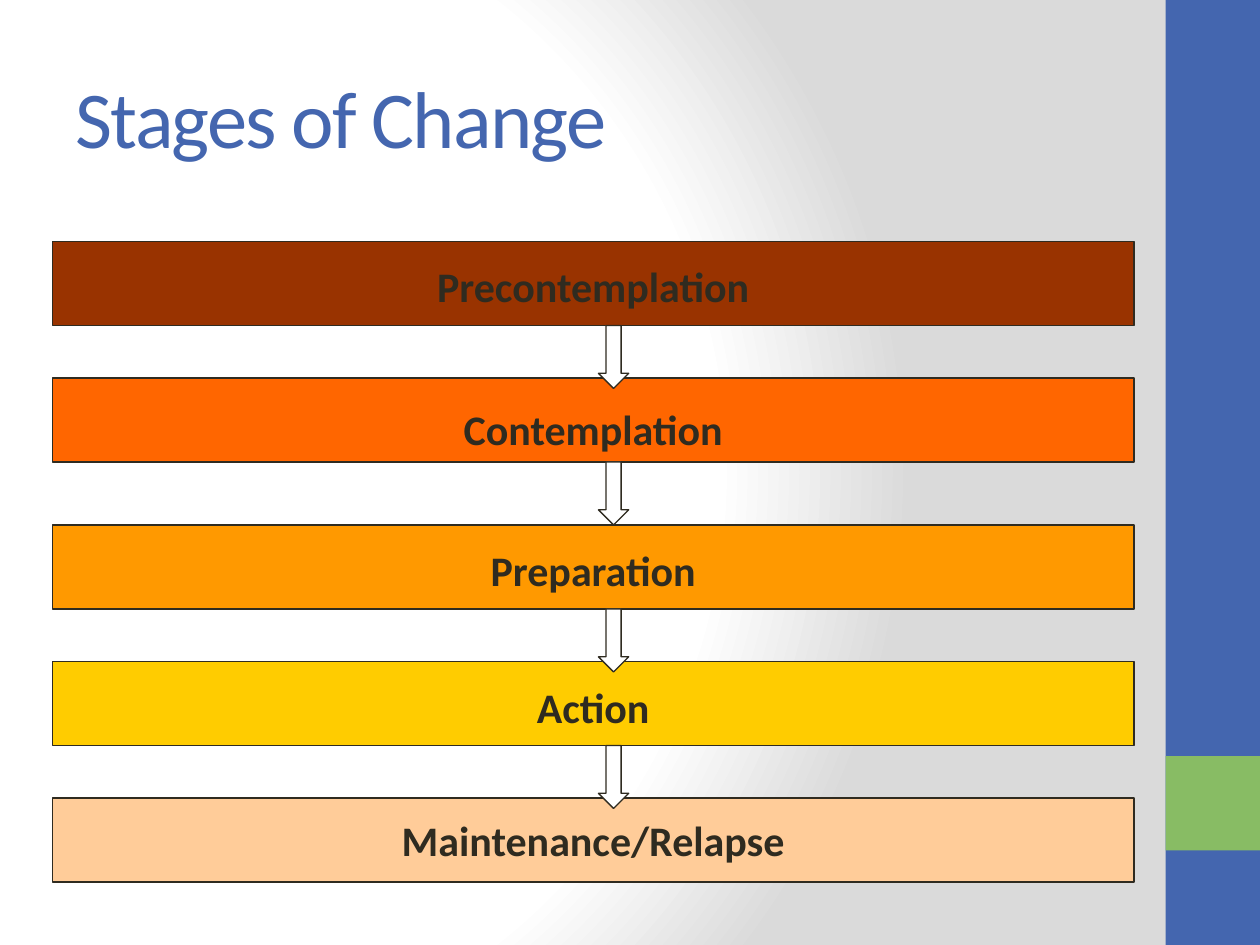
from dataclasses import dataclass

from lxml import etree
from pptx import Presentation
from pptx.dml.color import RGBColor
from pptx.enum.shapes import MSO_SHAPE
from pptx.enum.text import MSO_ANCHOR, PP_ALIGN
from pptx.oxml import parse_xml
from pptx.oxml.ns import nsdecls, qn
from pptx.util import Pt

RECTANGLE = MSO_SHAPE.RECTANGLE
PROCESS = MSO_SHAPE.FLOWCHART_PROCESS
DOWN_ARROW = MSO_SHAPE.DOWN_ARROW
MIDDLE = MSO_ANCHOR.MIDDLE
LEFT, CENTER = PP_ALIGN.LEFT, PP_ALIGN.CENTER

BLUE = RGBColor(0x44, 0x66, 0xAF)
GREEN = RGBColor(0x88, 0xBC, 0x64)
INK = RGBColor(0x2F, 0x2B, 0x20)
WHITE = RGBColor(0xFF, 0xFF, 0xFF)
SILVER = RGBColor(0xDA, 0xDA, 0xDA)

FONT = "Calibri"
TITLE_ONLY = 5
STAGE_LEFT, STAGE_WIDTH, STAGE_HEIGHT = 30, 618, 48
ARROW_LEFT, ARROW_WIDTH, ARROW_HEIGHT = 342, 17.28, 36


@dataclass(frozen=True)
class Stage:
    name: str
    top: float
    color: RGBColor
    text_drop: float  # how far the label sits below the middle


STAGES = [
    Stage("Precontemplation", 138, RGBColor(0x99, 0x33, 0x00), 1.5),
    Stage("Contemplation", 216, RGBColor(0xFF, 0x66, 0x00), 5),
    Stage("Preparation", 300, RGBColor(0xFF, 0x99, 0x00), 1.5),
    Stage("Action", 378, RGBColor(0xFF, 0xCC, 0x00), 1.5),
    Stage("Maintenance/Relapse", 456, RGBColor(0xFF, 0xCC, 0x99), 0),
]


def add_block(slide, kind, left: float, top: float, width: float,
              height: float, fill: RGBColor, line: RGBColor | None = None):
    block = slide.shapes.add_shape(kind, Pt(left), Pt(top), Pt(width), Pt(height))
    block.shadow.inherit = False
    block.fill.solid()
    block.fill.fore_color.rgb = fill
    if line is None:
        block.line.fill.background()
    else:
        block.line.color.rgb = line
        block.line.width = Pt(0.75)
    return block


def set_background(slide) -> None:
    """Fill the background with a circular gradient from white to silver."""
    slide.background.fill.solid()
    properties = slide.element.find(".//" + qn("p:bgPr"))
    gradient = parse_xml(f'<a:gradFill {nsdecls("a")} rotWithShape="1"/>')
    stops = etree.SubElement(gradient, qn("a:gsLst"))
    for percent, color in ((0, WHITE), (75, WHITE), (100, SILVER)):
        stop = etree.SubElement(stops, qn("a:gs"), pos=str(percent * 1000))
        etree.SubElement(stop, qn("a:srgbClr"), val=str(color))
    circle = etree.SubElement(gradient, qn("a:path"), {"path": "circle"})
    etree.SubElement(circle, qn("a:fillToRect"),
                     l="20000", t="50000", r="100000", b="50000")
    properties.replace(properties[0], gradient)


def set_title(slide, text: str) -> None:
    title = slide.shapes.title
    title.left, title.top, title.width, title.height = (
        Pt(36), Pt(21.6), Pt(600), Pt(90))
    title.text_frame.vertical_anchor = MIDDLE
    para = title.text_frame.paragraphs[0]
    para.alignment = LEFT
    para.font.name, para.font.size = FONT, Pt(46)
    para.font.color.rgb = BLUE
    span = para.add_run()
    span.text = text
    span.font._element.set("spc", "-100")


def add_stage(slide, stage: Stage) -> None:
    box = add_block(slide, PROCESS, STAGE_LEFT, stage.top, STAGE_WIDTH,
                    STAGE_HEIGHT, stage.color, INK)
    frame = box.text_frame
    frame.word_wrap = False
    frame.vertical_anchor = MIDDLE
    frame.margin_top = Pt(3.6 + 2 * stage.text_drop)
    para = frame.paragraphs[0]
    para.text = stage.name
    para.alignment = CENTER
    para.font.name, para.font.size, para.font.bold = FONT, Pt(24), True
    para.font.color.rgb = INK


def main() -> None:
    deck = Presentation()
    deck.slide_width, deck.slide_height = Pt(720), Pt(540)
    slide = deck.slides.add_slide(deck.slide_layouts[TITLE_ONLY])
    set_background(slide)
    add_block(slide, RECTANGLE, 666, 0, 54, 540, BLUE)
    add_block(slide, RECTANGLE, 666, 432, 54, 54, GREEN)
    set_title(slide, "Stages of Change")
    for stage in STAGES:
        add_stage(slide, stage)
    for stage in STAGES[:-1]:
        add_block(slide, DOWN_ARROW, ARROW_LEFT, stage.top + STAGE_HEIGHT,
                  ARROW_WIDTH, ARROW_HEIGHT, WHITE, INK)
    deck.save("out.pptx")


if __name__ == "__main__":
    main()
